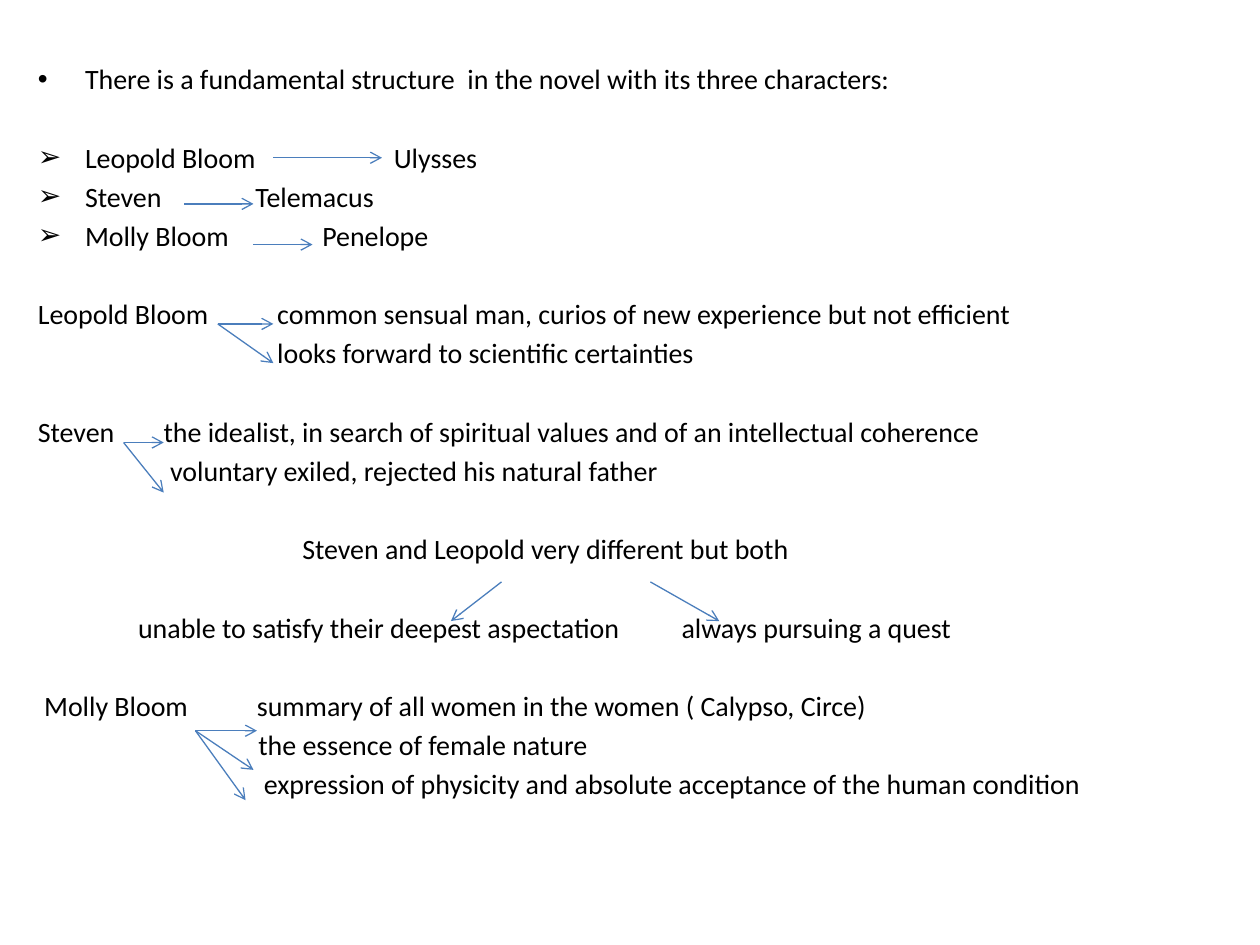
from lxml.etree import SubElement
from pptx import Presentation
from pptx.dml.color import RGBColor
from pptx.enum.shapes import MSO_CONNECTOR
from pptx.enum.text import MSO_ANCHOR, MSO_AUTO_SIZE
from pptx.oxml.ns import qn
from pptx.util import Cm, Pt

COLORS = {"text": "000000", "arrow": "4B7EBC"}
# Space before a following line, after one skipped line, after two skipped lines
LINE, GAP, WIDE_GAP = 3.1, 25.6, 48
LEFT, TOP, PITCH = 0.51, 1.12, 0.79  # text grid, in cm
HANG = 0.95  # hanging indent of bulleted lines, in cm


def fill_text(tf, lines):
    """Each line: text, bullet, left indent (cm), space before (pt)."""
    tf.word_wrap = True
    tf.auto_size = MSO_AUTO_SIZE.NONE
    tf.vertical_anchor = MSO_ANCHOR.TOP
    for i, (text, bullet, indent, before) in enumerate(lines):
        p = tf.paragraphs[0] if i == 0 else tf.add_paragraph()
        p.text = text
        pPr = p._p.get_or_add_pPr()
        pPr.set("marL", str(Cm(indent)))
        pPr.set("indent", str(-Cm(HANG) if bullet else 0))
        if bullet:
            SubElement(pPr, qn("a:buChar"), char=bullet)
        else:
            SubElement(pPr, qn("a:buNone"))
        p.space_before = Pt(before)
        for r in p.runs:
            r.font.name = "Calibri"
            r.font.size = Pt(16)
            r.font.color.rgb = RGBColor.from_string(COLORS["text"])


prs = Presentation()
prs.slide_width, prs.slide_height = Cm(25.4), Cm(19.05)
s = prs.slides.add_slide(prs.slide_layouts[1])
title = s.shapes.title.element
title.getparent().remove(title)

# Main text: introduction, characters and what they share
body = s.placeholders[1]
body.left, body.top, body.width, body.height = Cm(LEFT), Cm(TOP), Cm(24.21), Cm(17.42)
fill_text(body.text_frame, [
    ("There is a fundamental structure  in the novel with its three characters:",
     "•", HANG, 0),
    ("Leopold Bloom", "➢", HANG, GAP),
    ("Steven", "➢", HANG, LINE),
    ("Molly Bloom", "➢", HANG, LINE),
    ("Leopold Bloom", None, 0, GAP),
    ("Steven", None, 0, WIDE_GAP),
    ("Steven and Leopold very different but both", None, 5.33, WIDE_GAP),
    ("unable to satisfy their deepest aspectation", None, 2.02, GAP),
    (" Molly Bloom", None, 0, GAP),
])

# Text the arrows lead to: grid row, offset from the left (cm), width (cm),
# and each line with its indent (cm)
targets = [
    (2, 4.39, 5.5, [("Ulysses", 2.79), ("Telemacus", 0), ("Penelope", 1.35)]),
    (6, 4.83, 19, [
        ("common sensual man, curios of new experience but not efficient", 0),
        ("looks forward to scientific certainties", 0)]),
    (9, 2.54, 20, [
        ("the idealist, in search of spiritual values and of an intellectual coherence", 0),
        ("voluntary exiled, rejected his natural father", 0.13)]),
    (14, 12.98, 8, [("always pursuing a quest", 0)]),
    (16, 4.42, 19, [
        ("summary of all women in the women ( Calypso, Circe)", 0),
        ("the essence of female nature", 0.03),
        ("expression of physicity and absolute acceptance of the human condition", 0.14)]),
]
for row, offset, width, lines in targets:
    box = s.shapes.add_textbox(Cm(LEFT + offset), Cm(TOP + row * PITCH),
                               Cm(width), Cm(len(lines) * PITCH + 0.25))
    fill_text(box.text_frame, [(text, None, indent, LINE if i else 0)
                               for i, (text, indent) in enumerate(lines)])

# Arrows: start point and the points it leads to, in cm
arrows = [
    ((5.51, 3.18), [(7.7, 3.18)]),
    ((3.71, 4.11), [(5.11, 4.11)]),
    ((5.11, 4.93), [(6.3, 4.93)]),
    ((4.39, 6.53), [(5.51, 6.53), (5.51, 7.32)]),
    ((2.49, 8.92), [(3.3, 8.92), (3.3, 9.93)]),
    ((10.11, 11.73), [(9.09, 12.52)]),
    ((13.11, 11.73), [(14.5, 12.52)]),
    ((3.94, 14.73), [(5.18, 14.73), (5.11, 15.52), (4.95, 16.13)]),
]
for (x1, y1), ends in arrows:
    for x2, y2 in ends:
        c = s.shapes.add_connector(MSO_CONNECTOR.STRAIGHT, Cm(x1), Cm(y1), Cm(x2), Cm(y2))
        c.line.color.rgb = RGBColor.from_string(COLORS["arrow"])
        c.line.width = Pt(0.75)
        spPr = c.element.spPr
        SubElement(spPr.find(qn("a:ln")), qn("a:tailEnd"), type="arrow")
        SubElement(spPr, qn("a:effectLst"))

prs.save("out.pptx")
